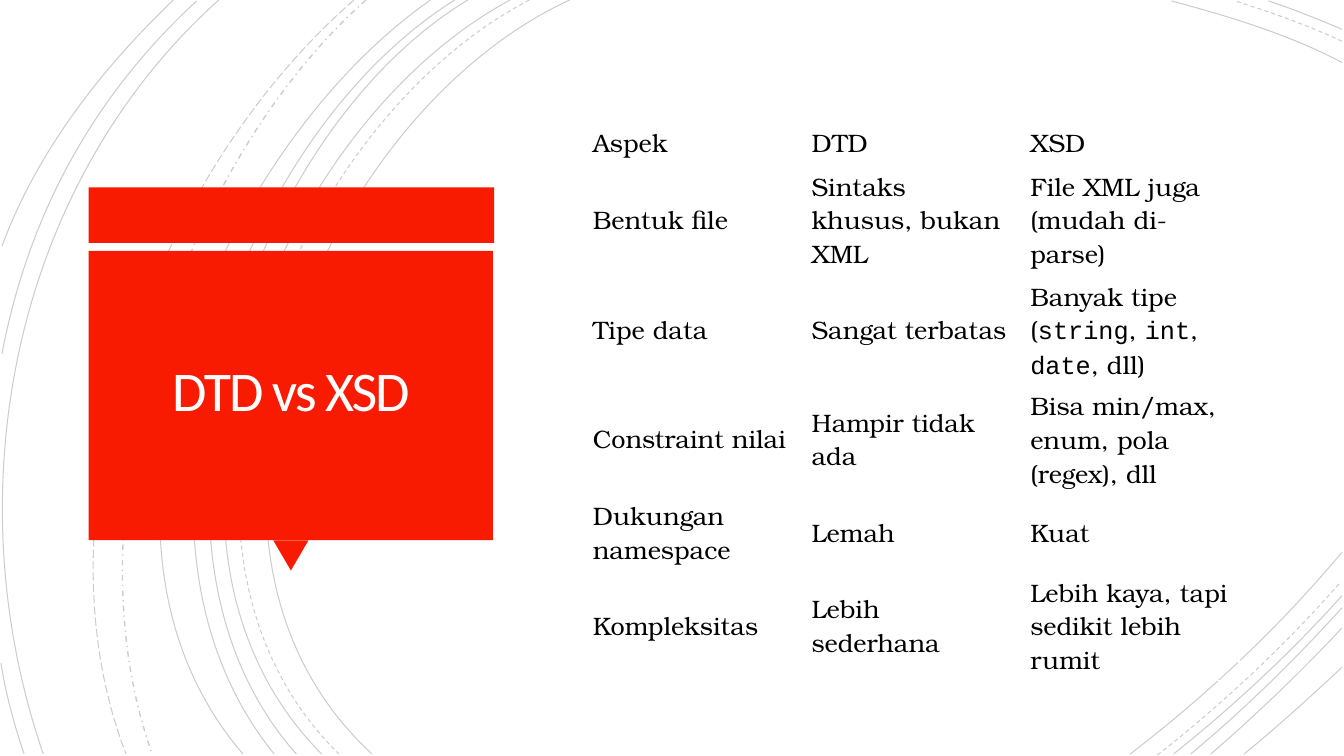
from dataclasses import dataclass

from lxml.etree import SubElement
from pptx import Presentation
from pptx.dml.color import RGBColor
from pptx.enum.dml import MSO_LINE
from pptx.enum.shapes import MSO_SHAPE
from pptx.enum.text import MSO_ANCHOR, PP_ALIGN
from pptx.oxml.ns import qn
from pptx.util import Pt

PX = 9144  # EMU per px, 100 px to the inch


@dataclass(frozen=True)
class Theme:
    red: RGBColor = RGBColor(0xF8, 0x1B, 0x02)
    white: RGBColor = RGBColor(0xFF, 0xFE, 0xFF)
    black: RGBColor = RGBColor(0, 0, 0)
    title_font: str = "Calibri"
    body_font: str = "TeX Gyre Bonum"
    code_font: str = "Courier New"
    title_size: int = 40
    body_size: int = 18
    arc_alpha: int = 20  # percent


T = Theme()

SOLID, DASH = MSO_LINE.SOLID, MSO_LINE.DASH
DASH_DOT, LONG_DASH = MSO_LINE.DASH_DOT, MSO_LINE.LONG_DASH

# Each arc: dash, start, two control points, end
ARCS = [
    (SOLID, (565, 0), (315, 115), (143, 540), (369, 748)),
    (SOLID, (1331, 62), (1278, 34), (1218, 16), (1162, 1)),
    (SOLID, (1121, 748), (1197, 690), (1269, 622), (1331, 548)),
    (DASH, (525, 0), (285, 125), (123, 537), (336, 748)),
    (DASH, (1331, 41), (1297, 25), (1260, 12), (1225, 1)),
    (DASH, (1148, 749), (1213, 698), (1275, 640), (1330, 577)),
    (SOLID, (506, 0), (270, 127), (110, 537), (319, 748)),
    (SOLID, (1331, 29), (1307, 19), (1283, 9), (1258, 1)),
    (SOLID, (1164, 748), (1223, 701), (1280, 648), (1331, 591)),
    (SOLID, (464, 0), (244, 133), (110, 541), (294, 748)),
    (SOLID, (1181, 748), (1234, 704), (1284, 655), (1331, 603)),
    (SOLID, (451, 0), (231, 138), (97, 533), (272, 748)),
    (SOLID, (1201, 748), (1246, 709), (1290, 667), (1331, 623)),
    (SOLID, (427, 0), (217, 147), (53, 529), (241, 748)),
    (SOLID, (1234, 748), (1267, 721), (1299, 692), (1331, 662)),
    (DASH_DOT, (363, 0), (176, 166), (65, 509), (151, 748)),
    (LONG_DASH, (351, 0), (157, 169), (29, 499), (125, 748)),
    (SOLID, (217, 0), (11, 185), (-46, 490), (43, 748)),
    (SOLID, (195, 1), (92, 96), (28, 214), (2, 351)),
    (SOLID, (1, 658), (6, 689), (14, 719), (24, 748)),
    (SOLID, (172, 0), (100, 69), (37, 150), (2, 244)),
]

# Each row: line count, then the cells; backticks mark code
ROWS = [
    (1, "Aspek", "DTD", "XSD"),
    (3, "Bentuk file", "Sintaks khusus, bukan XML", "File XML juga (mudah di-parse)"),
    (3, "Tipe data", "Sangat terbatas", "Banyak tipe (`string`, `int`, `date`, dll)"),
    (3, "Constraint nilai", "Hampir tidak ada", "Bisa min/max, enum, pola (regex), dll"),
    (2, "Dukungan namespace", "Lemah", "Kuat"),
    (3, "Kompleksitas", "Lebih sederhana", "Lebih kaya, tapi sedikit lebih rumit"),
]
COL_W, LINE_H, ROW_PAD = 217, 33, 10


def px(*lengths):
    return [n * PX for n in lengths]


def add_run(p, text, font, size, color):
    r = p.add_run()
    r.text = text
    r.font.name, r.font.size = font, Pt(size)
    r.font.color.rgb = color
    return r


def add_arc(s, dash, start, *points):
    fb = s.shapes.build_freeform(*start, scale=PX)
    fb.add_line_segments(points, close=False)
    sp = fb.convert_to_shape()
    sp.shadow.inherit = False
    sp.fill.background()
    sp.line.color.rgb = T.black
    sp.line.width = Pt(1 if dash == DASH_DOT else 0.75)
    sp.line.dash_style = dash
    color = sp.line._ln.find(".//" + qn("a:srgbClr"))
    SubElement(color, qn("a:alpha"), val=str(T.arc_alpha * 1000))
    # Turn the three straight segments into one cubic curve
    segments = list(sp._element.iter(qn("a:lnTo")))
    outline = segments[0].getparent()
    curve = SubElement(outline, qn("a:cubicBezTo"))
    for segment in segments:
        curve.append(segment[0])
        outline.remove(segment)


def add_block(s, kind, x, y, w, h, rotation=0):
    sp = s.shapes.add_shape(kind, *px(x, y, w, h))
    sp.shadow.inherit = False
    sp.fill.solid()
    sp.fill.fore_color.rgb = T.red
    sp.line.fill.background()
    sp.rotation = rotation


def add_title(s, text, x, y, w, h):
    tf = s.shapes.add_textbox(*px(x, y, w, h)).text_frame
    tf.word_wrap = True
    tf.vertical_anchor = MSO_ANCHOR.MIDDLE
    tf.margin_left = tf.margin_right = tf.margin_top = tf.margin_bottom = 25 * PX
    p = tf.paragraphs[0]
    p.alignment, p.line_spacing = PP_ALIGN.CENTER, 0.85
    r = add_run(p, text, T.title_font, T.title_size, T.white)
    r.font._element.set("spc", "-150")


def add_comparison(s, x, y):
    n_cols = len(ROWS[0]) - 1
    heights = [lines * LINE_H + ROW_PAD for lines, *_ in ROWS]
    frame = s.shapes.add_table(len(ROWS), n_cols, *px(x, y, n_cols * COL_W, sum(heights)))
    table = frame.table
    table.first_row = table.horz_banding = False
    for col in table.columns:
        col.width = COL_W * PX
    for row, height, (_, *texts) in zip(table.rows, heights, ROWS):
        row.height = height * PX
        for cell, text in zip(row.cells, texts):
            cell.fill.background()
            cell.vertical_anchor = MSO_ANCHOR.MIDDLE
            p = cell.text_frame.paragraphs[0]
            for i, part in enumerate(text.split("`")):
                font = T.code_font if i % 2 else T.body_font
                add_run(p, part, font, T.body_size, T.black)


def main():
    prs = Presentation()
    prs.slide_width, prs.slide_height = px(1333, 750)
    s = prs.slides.add_slide(prs.slide_layouts[6])

    # Background arcs
    for arc in ARCS:
        add_arc(s, *arc)

    # Red title panel
    add_block(s, MSO_SHAPE.RECTANGLE, 88, 186, 402, 55)
    add_block(s, MSO_SHAPE.ISOSCELES_TRIANGLE, 271, 536, 35, 30, rotation=180)
    add_block(s, MSO_SHAPE.RECTANGLE, 88, 249, 401, 287)
    add_title(s, "DTD vs XSD", 97, 257, 383, 269)

    # Comparison table
    add_comparison(s, 578, 120)

    prs.save("out.pptx")


if __name__ == "__main__":
    main()
